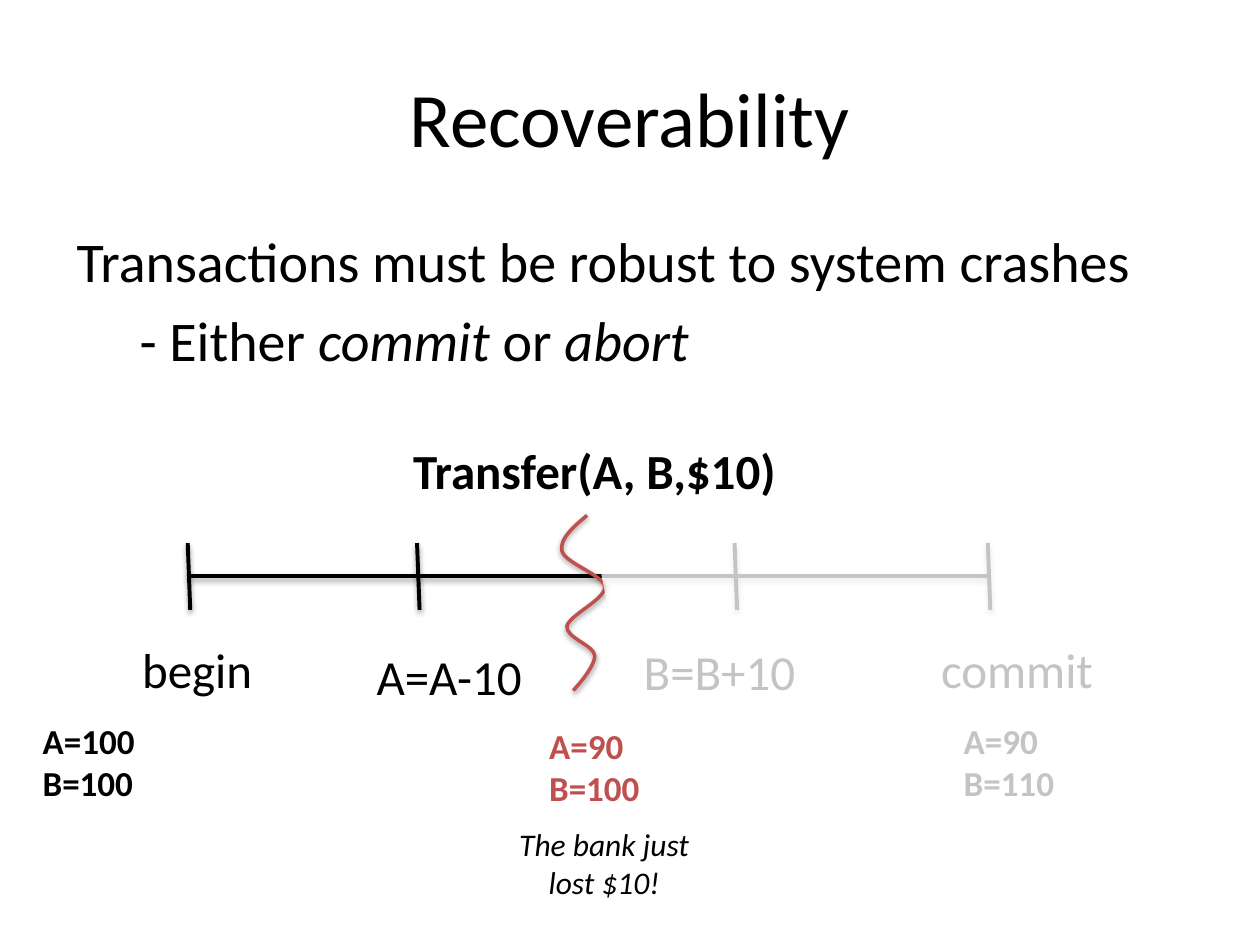
from dataclasses import dataclass

import pptx
import pptx.dml.color
import pptx.enum.shapes
import pptx.enum.text
import pptx.oxml
import pptx.oxml.ns
import pptx.util
from pptx.util import Inches


@dataclass(frozen=True)
class Theme:
    """Colours, font and type sizes of the slide."""
    font: str = "Calibri"
    ink: str = "000000"
    crash: str = "C0504D"
    veil: str = "FFFFFF"
    title: int = 44
    body: int = 32
    label: int = 28
    state: int = 20
    note: int = 18


THEME = Theme()
ALIGN = pptx.enum.text.PP_ALIGN
DRAWING = pptx.oxml.ns.nsdecls("a")


def rgb(value):
    """Turn a hex string into a colour."""
    return pptx.dml.color.RGBColor.from_string(value)


def style(span, size, color=THEME.ink, bold=False, italic=False):
    """Format one run."""
    font = span.font
    font.name, font.size, font.color.rgb = THEME.font, pptx.util.Pt(size), rgb(color)
    font.bold, font.italic = bold, italic


def add_text(page, box, lines, size, align=ALIGN.LEFT, wrap=False, **look):
    """Place a text box with one paragraph per line."""
    shape = page.shapes.add_textbox(*map(Inches, box))
    frame = shape.text_frame
    frame.text = "\n".join(lines)
    frame.word_wrap = wrap
    frame.auto_size = pptx.enum.text.MSO_AUTO_SIZE.SHAPE_TO_FIT_TEXT
    for para in frame.paragraphs:
        para.alignment = align
        for span in para.runs:
            style(span, size, **look)


def add_shadow(shape):
    """Give a line a soft shadow straight below it."""
    shape._element.spPr.append(pptx.oxml.parse_xml(
        f'<a:effectLst {DRAWING}><a:outerShdw blurRad="40000" dist="20000" '
        'dir="5400000" rotWithShape="0"><a:srgbClr val="000000">'
        '<a:alpha val="38000"/></a:srgbClr></a:outerShdw></a:effectLst>'))


def add_line(page, start, end):
    """Draw one black line of the timeline."""
    line = page.shapes.add_connector(
        pptx.enum.shapes.MSO_CONNECTOR.STRAIGHT, *map(Inches, (*start, *end)))
    line.line.color.rgb = rgb(THEME.ink)
    line.line.width = pptx.util.Pt(2.25)
    add_shadow(line)


def add_title(page, box):
    """Place the slide title."""
    title = page.shapes.title
    title.left, title.top, title.width, title.height = map(Inches, box)
    title.text_frame.text = "Recoverability"
    para = title.text_frame.paragraphs[0]
    para.alignment = ALIGN.CENTER
    style(para.runs[0], THEME.title)


def add_body(page, box):
    """Place the claim and its indented detail."""
    frame = page.shapes.add_textbox(*map(Inches, box)).text_frame
    frame.word_wrap = True
    claim, detail = frame.paragraphs[0], frame.add_paragraph()
    claim.text = "Transactions must be robust to system crashes"
    for text in ("- Either ", "commit", " or ", "abort"):
        detail.add_run().text = text
    detail._p.get_or_add_pPr().set("marL", str(Inches(0.5)))
    for para in (claim, detail):
        para.space_before = pptx.util.Pt(THEME.body * 0.2)
        for index, span in enumerate(para.runs):
            style(span, THEME.body, italic=index % 2 == 1)


def add_timeline(page, box):
    """Draw the transfer's axis, its ticks and the step labels."""
    left, top, width, height = box
    axis = top + height / 2
    add_line(page, (left, axis), (left + width, axis))
    steps = (("begin", 0, -0.46, 0.72, 1.08), ("A=A-10", 1.82, -0.42, 0.77, 1.37),
             ("B=B+10", 4.34, -0.82, 0.73, 1.42), ("commit", width, -0.47, 0.72, 1.42))
    for text, offset, shift, drop, span_width in steps:
        x = left + offset
        add_line(page, (x, top), (x + 0.02, top + height))
        add_text(page, (x + shift, top + drop, span_width, 0.57), [text], THEME.label)
    add_text(page, (left + 1.69, top - 0.86, 3.15, 0.57), ["Transfer(A, B,$10)"],
             THEME.label, bold=True)


def add_crash(page, box):
    """Draw the curved line where the system crashes."""
    left, top, width, height = box
    start = (0.2, 0)
    curves = (((0.09, 0.09), (-0.02, 0.19), (0, 0.28)),
              ((0.02, 0.38), (0.33, 0.47), (width, 0.57)),
              ((width, 0.67), (0.06, 0.79), (0.04, 0.88)),
              ((0.03, 0.97), (0.25, 1.03), (0.26, 1.11)),
              ((0.27, 1.2), (0.09, height), (0.09, height)))
    builder = page.shapes.build_freeform(*map(Inches, start))
    builder.add_line_segments([tuple(map(Inches, curve[-1])) for curve in curves], close=False)
    crash = builder.convert_to_shape(Inches(left), Inches(top))
    segments = list(crash._element.iter(pptx.oxml.ns.qn("a:lnTo")))
    for segment, curve in zip(segments, curves):
        points = "".join(f'<a:pt x="{Inches(x)}" y="{Inches(y)}"/>' for x, y in curve)
        segment.getparent().replace(segment, pptx.oxml.parse_xml(
            f"<a:cubicBezTo {DRAWING}>{points}</a:cubicBezTo>"))
    crash.fill.background()
    crash.line.color.rgb = rgb(THEME.crash)
    crash.line.width = pptx.util.Pt(2)
    add_shadow(crash)


def add_states(page, box):
    """Place the account balances and the note on the loss."""
    left, top, width, height = box
    states = ((0, 0, "A=100", "B=100", THEME.ink),
              (4.02, 0.04, "A=90", "B=100", THEME.crash),
              (width - 0.95, 0, "A=90", "B=110", THEME.ink))
    for x, y, first, second, color in states:
        add_text(page, (left + x, top + y, 0.95, 0.77), [first, second],
                 THEME.state, color=color, bold=True)
    add_text(page, (left + 3.58, top + height - 0.71, 1.95, 0.71),
             ["The bank just lost $10!"], THEME.note, ALIGN.CENTER, wrap=True, italic=True)


def add_veil(page, box):
    """Fade the steps that never happen."""
    veil = page.shapes.add_shape(
        pptx.enum.shapes.MSO_SHAPE.PARALLELOGRAM, *map(Inches, box))
    veil.adjustments[0] = 0.23
    veil.rotation = 258.7
    veil.shadow.inherit = False
    veil.line.fill.background()
    veil.fill.solid()
    veil.fill.fore_color.rgb = rgb(THEME.veil)
    color = next(veil._element.spPr.iter(pptx.oxml.ns.qn("a:srgbClr")))
    color.append(pptx.oxml.parse_xml(f'<a:alpha {DRAWING} val="77000"/>'))


def main():
    """Build and save the deck."""
    deck = pptx.Presentation()
    deck.slide_width, deck.slide_height = Inches(10), Inches(7.5)
    page = deck.slides.add_slide(deck.slide_layouts.get_by_name("Title Only"))
    add_title(page, (0.5, 0.3, 9, 1.25))
    add_body(page, (0.51, 1.75, 9, 4.95))
    add_timeline(page, (1.49, 4.31, 6.35, 0.53))
    add_crash(page, (4.46, 4.09, 0.34, 1.39))
    add_states(page, (0.24, 5.66, 8.26, 1.55))
    add_veil(page, (5.35, 3.1, 3.47, 4.27))
    deck.save("out.pptx")


if __name__ == "__main__":
    main()
